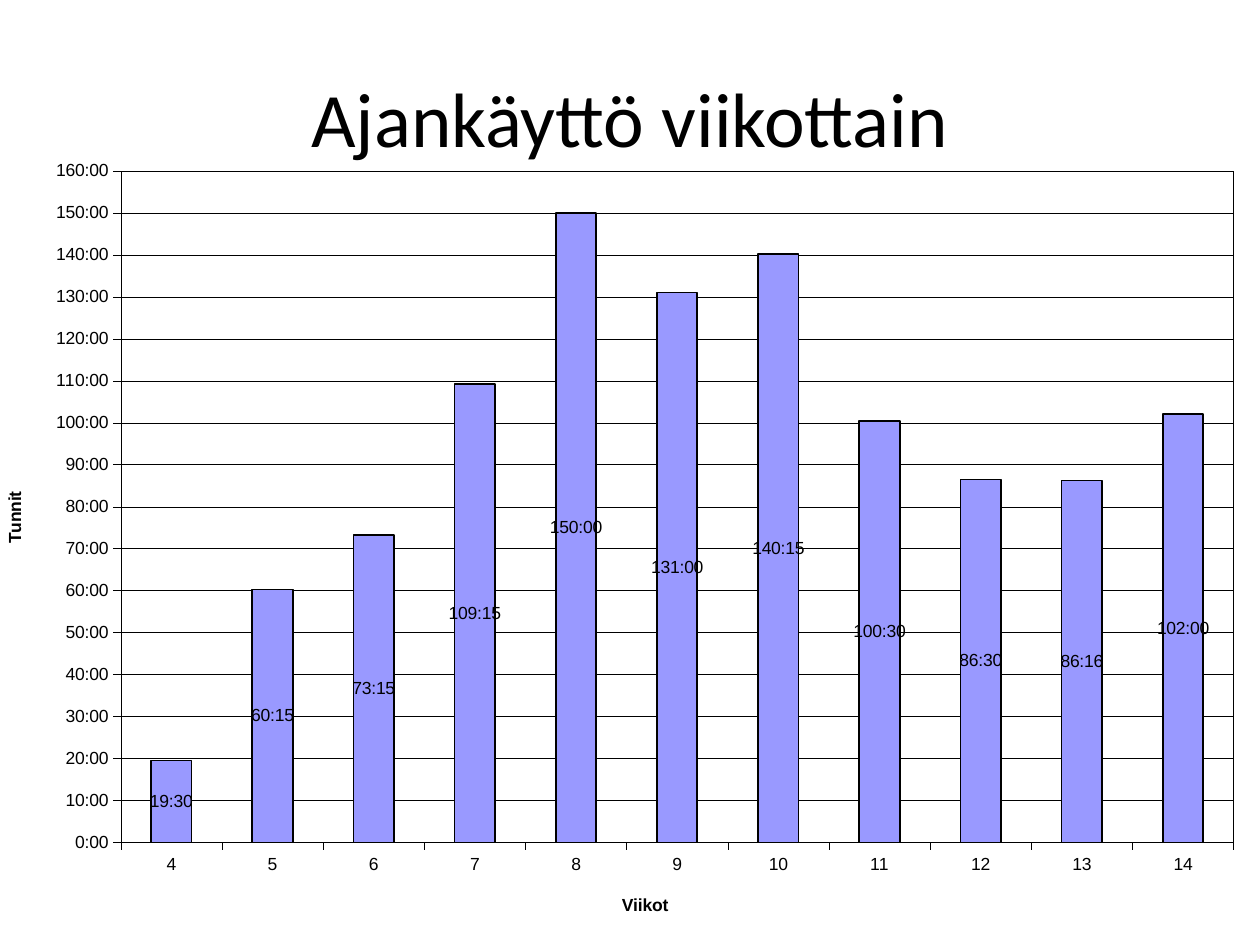
from math import ceil
from typing import NamedTuple

from lxml import etree
from pptx import Presentation
from pptx.chart.data import CategoryChartData
from pptx.dml.color import RGBColor
from pptx.enum.chart import XL_CHART_TYPE, XL_LABEL_POSITION, XL_TICK_MARK
from pptx.enum.text import MSO_ANCHOR, PP_ALIGN
from pptx.oxml import parse_xml
from pptx.oxml.ns import nsdecls, qn
from pptx.util import Pt

COLUMN_STACKED = XL_CHART_TYPE.COLUMN_STACKED
LABEL_CENTER = XL_LABEL_POSITION.CENTER
TICK_OUTSIDE, TICK_NONE = XL_TICK_MARK.OUTSIDE, XL_TICK_MARK.NONE
MIDDLE, CENTER = MSO_ANCHOR.MIDDLE, PP_ALIGN.CENTER

BLACK = RGBColor(0x00, 0x00, 0x00)
LAVENDER = RGBColor(0x99, 0x99, 0xFF)
HOURS_FORMAT = "[h]:mm"
HOURS_PER_DAY = 24
MINUTES_PER_DAY = 1440
THIN = Pt(0.25)
CHART_WIDTH, CHART_HEIGHT = Pt(733), Pt(455)


class Week(NamedTuple):
    number: int
    hours: int
    minutes: int

    @property
    def days(self) -> float:
        """Days to four decimals, rounded up so that no minute is lost."""
        minutes = self.hours * 60 + self.minutes
        return ceil(minutes * 10000 / MINUTES_PER_DAY) / 10000


WEEKS = [
    Week(4, 19, 30), Week(5, 60, 15), Week(6, 73, 15), Week(7, 109, 15),
    Week(8, 150, 0), Week(9, 131, 0), Week(10, 140, 15), Week(11, 100, 30),
    Week(12, 86, 30), Week(13, 86, 16), Week(14, 102, 0),
]


def style_font(font, size: float, name: str = "Arial", bold: bool = False) -> None:
    font.size, font.name, font.bold = Pt(size), name, bold
    font.color.rgb = BLACK


def style_line(line, width: int) -> None:
    line.color.rgb = BLACK
    line.width = width


def set_layout(element, index: int, **lengths: int) -> None:
    """Place a chart part by lengths measured from the chart's corner."""
    for old_layout in element.findall(qn("c:layout")):
        element.remove(old_layout)
    layout = etree.Element(qn("c:layout"))
    manual = etree.SubElement(layout, qn("c:manualLayout"))
    if "w" in lengths:
        etree.SubElement(manual, qn("c:layoutTarget"), val="inner")
    for mode in ("xMode", "yMode"):
        etree.SubElement(manual, qn(f"c:{mode}"), val="edge")
    for key, length in lengths.items():
        whole = CHART_WIDTH if key in "xw" else CHART_HEIGHT
        etree.SubElement(manual, qn(f"c:{key}"), val=str(length / whole))
    element.insert(index, layout)


def style_axis(axis, title: str, x: int, y: int, rotation: int) -> None:
    axis.major_tick_mark, axis.minor_tick_mark = TICK_OUTSIDE, TICK_NONE
    style_font(axis.tick_labels.font, 10)
    style_line(axis.format.line, THIN)
    frame = axis.axis_title.text_frame
    frame.text = title
    style_font(frame.paragraphs[0].font, 10, bold=True)
    title_element = axis.axis_title.element
    title_element.find(".//" + qn("a:bodyPr")).set("rot", str(rotation))
    set_layout(title_element, 1, x=x, y=y)


def add_hours_chart(slide) -> None:
    chart_data = CategoryChartData(number_format=HOURS_FORMAT)
    chart_data.categories = [str(week.number) for week in WEEKS]
    chart_data.add_series("Series 1", [week.days for week in WEEKS])
    chart = slide.shapes.add_chart(
        COLUMN_STACKED, Pt(-13), Pt(83), CHART_WIDTH, CHART_HEIGHT, chart_data).chart
    chart.has_legend = chart.has_title = False
    style_font(chart.font, 10)

    # Axes
    style_axis(chart.category_axis, "Viikot", Pt(366.5), Pt(426), 0)
    hours_axis = chart.value_axis
    style_axis(hours_axis, "Tunnit", Pt(13), Pt(196), -5400000)
    hours_axis.minimum_scale = 0
    hours_axis.maximum_scale = 160 / HOURS_PER_DAY
    hours_axis.major_unit = 10 / HOURS_PER_DAY
    hours_axis.tick_labels.number_format = HOURS_FORMAT
    hours_axis.tick_labels.number_format_is_linked = False
    hours_axis.has_major_gridlines = True
    style_line(hours_axis.major_gridlines.format.line, THIN)

    # Columns and their labels
    plot = chart.plots[0]
    plot.gap_width, plot.overlap = 150, 100
    plot.vary_by_categories = False
    series = plot.series[0]
    series.format.fill.solid()
    series.format.fill.fore_color.rgb = LAVENDER
    style_line(series.format.line, Pt(1))
    labels = series.data_labels
    labels.show_value = True
    labels.number_format = HOURS_FORMAT
    labels.number_format_is_linked = False
    labels.position = LABEL_CENTER
    style_font(labels.font, 10)

    # Plot area with a thin frame
    plot_area = chart.element.find(".//" + qn("c:plotArea"))
    set_layout(plot_area, 0, x=Pt(82), y=Pt(14.7), w=Pt(636), h=Pt(383.8))
    plot_area.append(parse_xml(
        f'<c:spPr {nsdecls("c", "a")}><a:noFill/><a:ln w="{THIN}"><a:solidFill>'
        f'<a:srgbClr val="{BLACK}"/></a:solidFill></a:ln></c:spPr>'))


def add_title(slide, text: str) -> None:
    title = slide.shapes.title
    title.left, title.top, title.width, title.height = Pt(36), Pt(21.6), Pt(648), Pt(90)
    title.text_frame.text = text
    title.text_frame.vertical_anchor = MIDDLE
    paragraph = title.text_frame.paragraphs[0]
    paragraph.alignment = CENTER
    style_font(paragraph.font, 44, "Calibri")


def main() -> None:
    presentation = Presentation()
    presentation.slide_width, presentation.slide_height = Pt(720), Pt(540)
    slide = presentation.slides.add_slide(presentation.slide_layouts[5])
    add_title(slide, "Ajankäyttö viikottain")
    add_hours_chart(slide)
    presentation.save("out.pptx")


if __name__ == "__main__":
    main()
